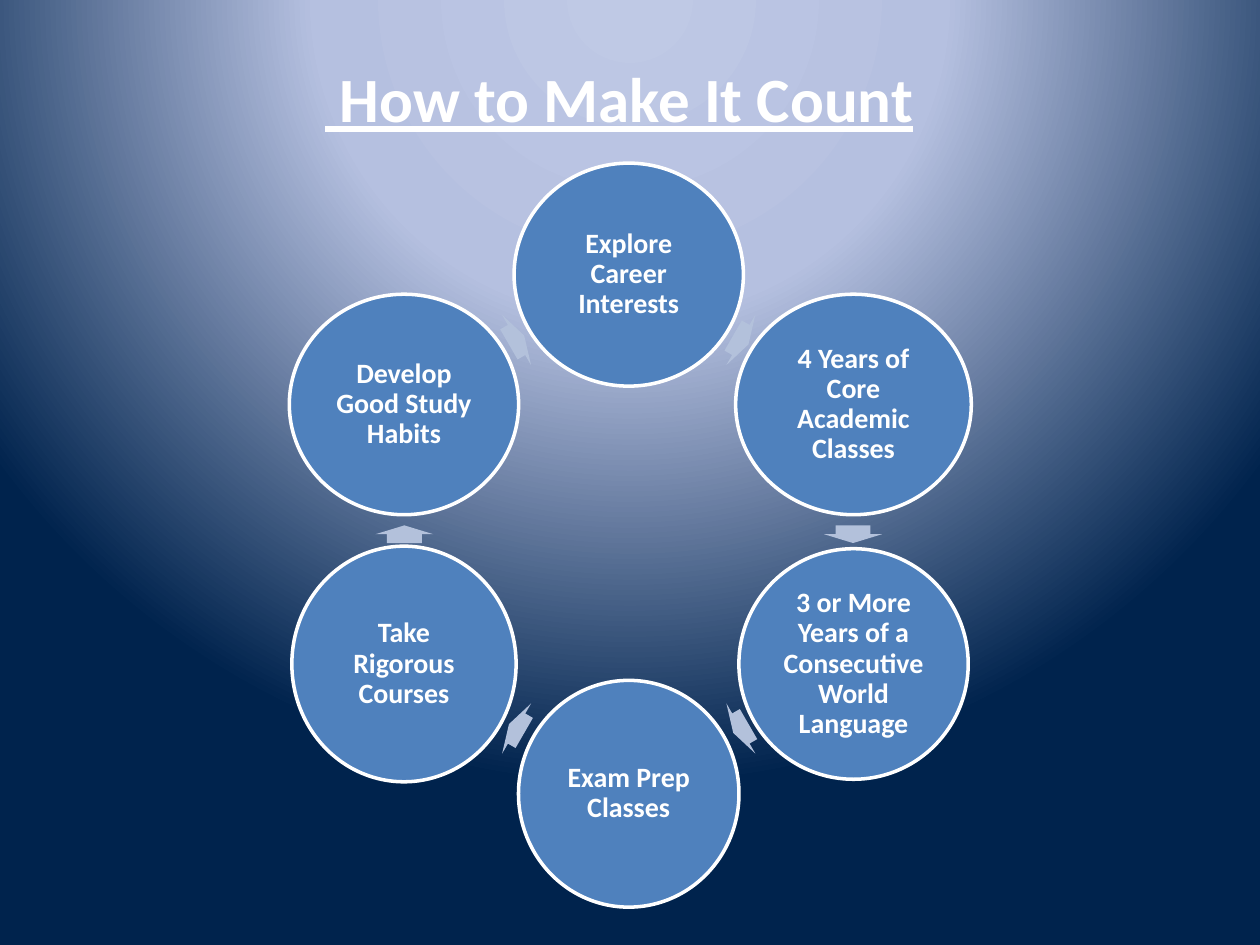
"""Build the 'How to Make It Count' slide: a cycle of six steps."""
from math import cos, radians, sin

from pptx import Presentation
from pptx.dml.color import RGBColor
from pptx.enum.shapes import MSO_SHAPE
from pptx.enum.text import MSO_ANCHOR, PP_ALIGN
from pptx.oxml import parse_xml
from pptx.oxml.ns import nsdecls, qn
from pptx.util import Inches, Pt

WHITE = RGBColor(0xFF, 0xFF, 0xFF)
STEP_BLUE = RGBColor(0x4F, 0x81, 0xBD)
ARROW_BLUE = RGBColor(0xB3, 0xC1, 0xDB)
SKY_STOPS = [(0, "BFC9E5"), (40, "B5C0E0"), (100, "00234D")]

CENTER_X, CENTER_Y = 4.99, 4.24
STEP_RADIUS, ARROW_RADIUS = 2.06, 1.78
STEPS = [
    ("Explore Career Interests", 1.82, 1.77),
    ("4 Years of Core Academic Classes", 1.87, 1.75),
    ("3 or More Years of a Consecutive World Language", 1.82, 1.83),
    ("Exam Prep Classes", 1.75, 1.8),
    ("Take Rigorous Courses", 1.78, 1.87),
    ("Develop Good Study Habits", 1.82, 1.75),
]


def add_on_ring(kind, radius, angle, width, height, color):
    x = CENTER_X + radius * sin(radians(angle))
    y = CENTER_Y - radius * cos(radians(angle))
    shape = slide.shapes.add_shape(
        kind, Inches(x - width / 2), Inches(y - height / 2), Inches(width), Inches(height)
    )
    shape.shadow.inherit = False
    shape.fill.solid()
    shape.fill.fore_color.rgb = color
    return shape


def write(frame, text, font_format):
    frame.word_wrap = True
    frame.vertical_anchor = MSO_ANCHOR.MIDDLE
    paragraph = frame.paragraphs[0]
    paragraph.alignment = PP_ALIGN.CENTER
    run = paragraph.add_run()
    run.text = text
    run.font.color.rgb = WHITE
    for attribute, value in font_format.items():
        setattr(run.font, attribute, value)
    return paragraph


deck = Presentation()
deck.slide_width, deck.slide_height = Inches(10), Inches(7.5)
slide = deck.slides.add_slide(deck.slide_layouts[5])

slide.background.fill.gradient()
plain_gradient = slide.element.find(".//" + qn("a:gradFill"))
stops = "".join(
    f'<a:gs pos="{position * 1000}"><a:srgbClr val="{color}"/></a:gs>'
    for position, color in SKY_STOPS
)
sky = parse_xml(
    f'<a:gradFill {nsdecls("a")} rotWithShape="1"><a:gsLst>{stops}</a:gsLst>'
    '<a:path path="circle"><a:fillToRect l="50000" t="-80000" r="50000" b="180000"/>'
    "</a:path></a:gradFill>"
)
plain_gradient.getparent().replace(plain_gradient, sky)

heading = slide.shapes.title
heading.left, heading.top = Inches(0.25), Inches(0.15)
heading.width, heading.height = Inches(9.33), Inches(1.25)
heading_font = {"name": "Calibri", "size": Pt(36), "bold": True, "underline": True}
write(heading.text_frame, " How to Make It Count", heading_font)

step_font = {"name": "Calibri", "size": Pt(16), "bold": True}
for index, (label, width, height) in enumerate(STEPS):
    angle = index * 60
    step = add_on_ring(MSO_SHAPE.OVAL, STEP_RADIUS, angle, width, height, STEP_BLUE)
    step.line.color.rgb = WHITE
    step.line.width = Pt(2)
    for side in ("left", "top", "right", "bottom"):
        setattr(step.text_frame, f"margin_{side}", Inches(0.02))
    write(step.text_frame, label, step_font).line_spacing = 0.9

    arrow = add_on_ring(
        MSO_SHAPE.RIGHT_ARROW, ARROW_RADIUS, angle + 30, 0.14, 0.46, ARROW_BLUE
    )
    arrow.line.fill.background()
    arrow.adjustments[0] = 0.6
    arrow.adjustments[1] = 0.5
    arrow.rotation = angle + 30

deck.save("out.pptx")
